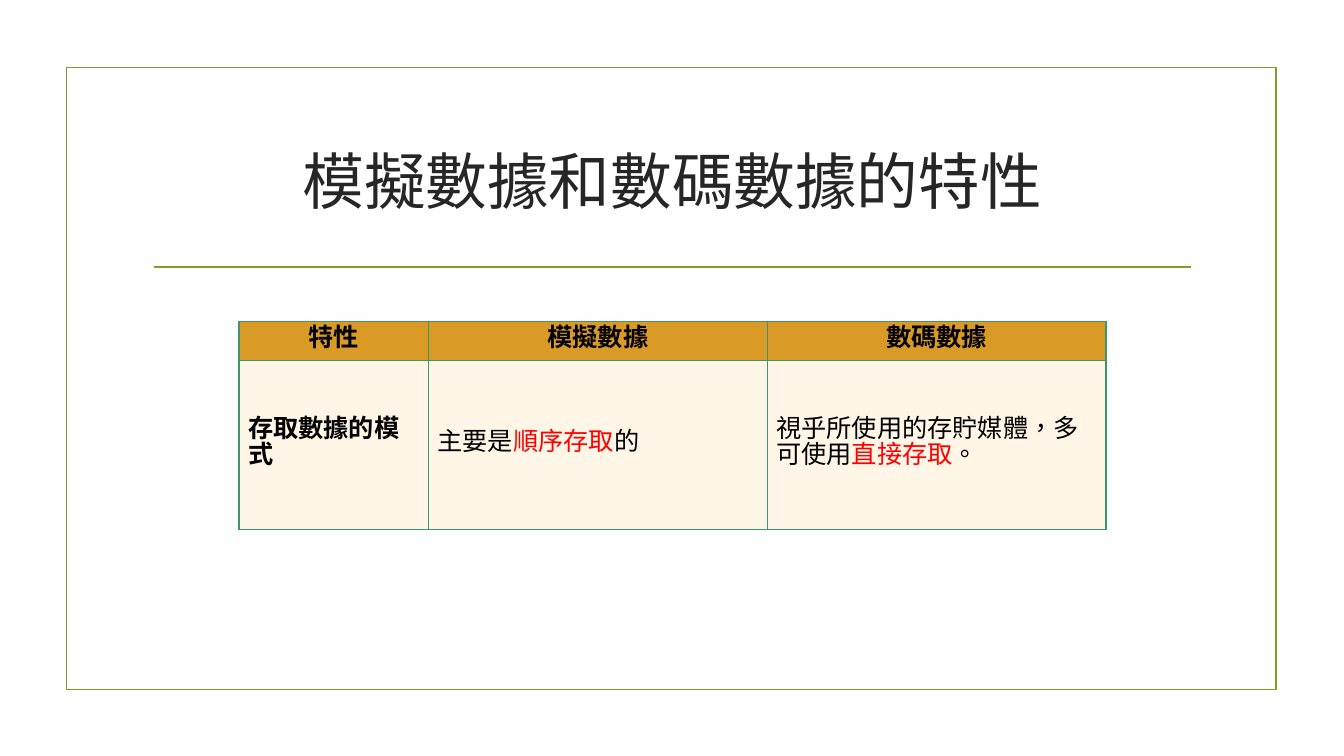
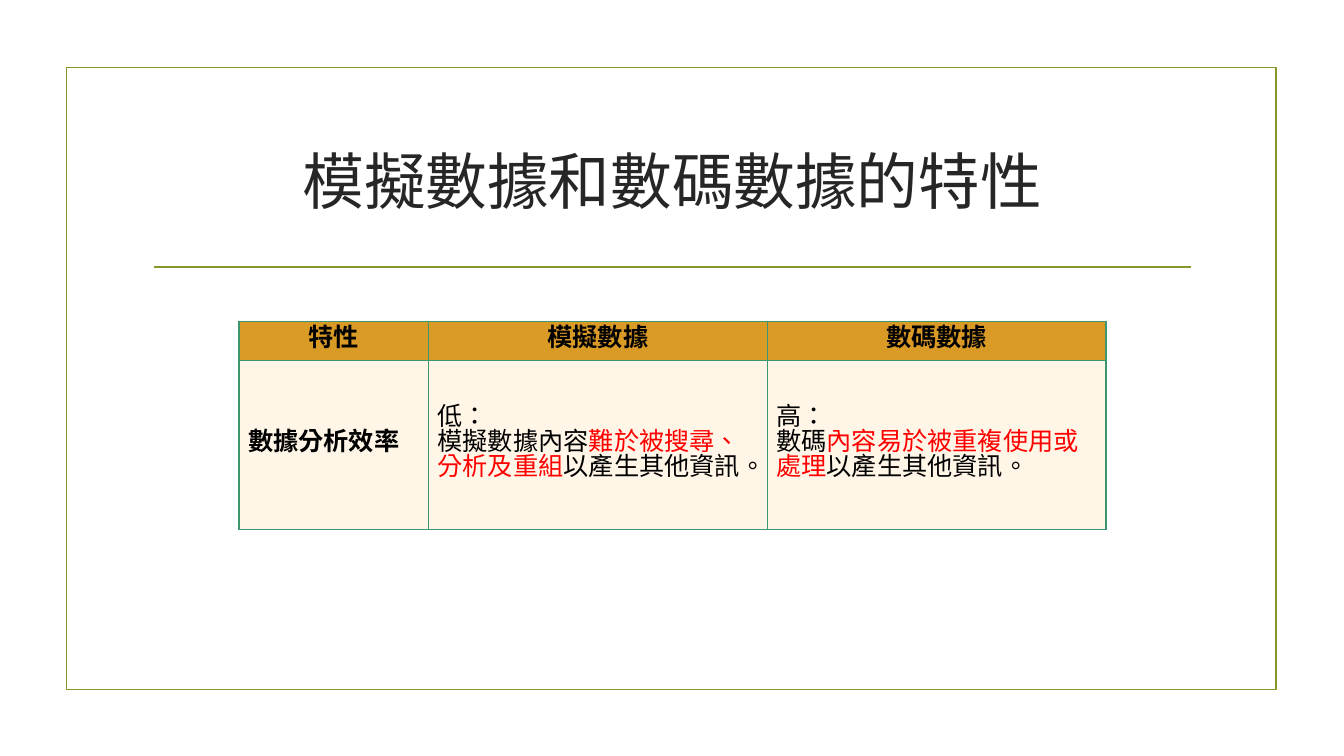
from lxml import etree
from pptx import Presentation
from pptx.dml.color import RGBColor
from pptx.enum.lang import MSO_LANGUAGE_ID
from pptx.enum.shapes import MSO_CONNECTOR, MSO_SHAPE
from pptx.enum.text import MSO_ANCHOR, PP_ALIGN
from pptx.oxml.ns import qn
from pptx.util import Inches, Pt

RECTANGLE = MSO_SHAPE.RECTANGLE
STRAIGHT = MSO_CONNECTOR.STRAIGHT
MIDDLE = MSO_ANCHOR.MIDDLE
CENTER, LEFT = PP_ALIGN.CENTER, PP_ALIGN.LEFT
CHINESE = MSO_LANGUAGE_ID.TRADITIONAL_CHINESE

COLORS = {
    "frame": "83992A", "title": "262626", "text": "000000", "key": "FF0000",
    "header": "DA9A26", "body": "FFF6E7", "border": "3C9770",
}
TITLE_FONT, TABLE_FONT = "Times New Roman", "Lato"
SLIDE_SIZE = (13.33, 7.5)

# Boxes: left, top, width, height in inches
FRAME_BOX = (0.66, 0.67, 12, 6.17)
TITLE_BOX = (1.42, 1.07, 10.5, 1.43)
RULE_BOX = (1.53, 2.65, 10.28, 0)
TABLE_BOX = (2.37, 3.19, 8.6, 2.06)
COLUMN_WIDTHS = (1.88, 3.36, 3.36)
HEADER_HEIGHT = 0.39

TITLE = "模擬數據和數碼數據的特性"
HEADERS = ("特性", "模擬數據", "數碼數據")

# Each slide: row label, then per column a list of paragraphs of (text, color) runs
ROWS = [
    ("存取數據的模式",
     [[("主要是", "text"), ("順序存取", "key"), ("的", "text")]],
     [[("視乎所使用的存貯媒體，多可使用", "text"), ("直接存取", "key"), ("。", "text")]]),
    ("數據分析效率",
     [[("低：", "text")],
      [("模擬數據內容", "text"), ("難於被搜尋、分析及重組", "key"),
       ("以產生其他資訊。", "text")]],
     [[("高：", "text")],
      [("數碼", "text"), ("內容易於被重複使用或處理", "key"),
       ("以產生其他資訊。", "text")]]),
]


def rgb(name):
    return RGBColor.from_string(COLORS[name])


def add_run(paragraph, text, font_name, size, color, bold=False):
    run = paragraph.add_run()
    run.text = text
    run.font.name = font_name
    run.font.size = Pt(size)
    run.font.bold = bold
    run.font.color.rgb = rgb(color)
    run.font.language_id = CHINESE


def set_outline(shape):
    shape.line.color.rgb = rgb("frame")
    shape.line.width = Pt(1.25)


def add_frame(slide, box):
    frame = slide.shapes.add_shape(RECTANGLE, *map(Inches, box))
    frame.shadow.inherit = False
    frame.fill.background()
    set_outline(frame)


def add_rule(slide, box):
    left, top, width, height = box
    ends = (left, top, left + width, top + height)
    rule = slide.shapes.add_connector(STRAIGHT, *map(Inches, ends))
    set_outline(rule)
    etree.SubElement(rule._element.spPr, qn("a:effectLst"))


def add_title(slide, box, text):
    text_frame = slide.shapes.add_textbox(*map(Inches, box)).text_frame
    text_frame.word_wrap = True
    text_frame.vertical_anchor = MIDDLE
    paragraph = text_frame.paragraphs[0]
    paragraph.alignment = CENTER
    add_run(paragraph, text, TITLE_FONT, 44, "title")


def set_borders(cell):
    properties = cell._tc.get_or_add_tcPr()
    for side in ("a:lnL", "a:lnR", "a:lnT", "a:lnB"):
        line = etree.SubElement(properties, qn(side), w=str(Pt(1)))
        fill = etree.SubElement(line, qn("a:solidFill"))
        etree.SubElement(fill, qn("a:srgbClr"), val=COLORS["border"])


def fill_cell(cell, paragraphs, fill, alignment=LEFT, bold=False):
    set_borders(cell)
    cell.fill.solid()
    cell.fill.fore_color.rgb = rgb(fill)
    cell.vertical_anchor = MIDDLE
    cell.margin_left = cell.margin_right = Inches(0.09)
    cell.margin_top = cell.margin_bottom = Inches(0.05)
    text_frame = cell.text_frame
    for index, runs in enumerate(paragraphs):
        paragraph = text_frame.add_paragraph() if index else text_frame.paragraphs[0]
        paragraph.alignment = alignment
        paragraph.line_spacing = Pt(18)
        for text, color in runs:
            add_run(paragraph, text, TABLE_FONT, 18, color, bold)


def add_comparison_table(slide, box, row):
    table = slide.shapes.add_table(2, len(HEADERS), *map(Inches, box)).table
    table.first_row = table.horz_banding = False
    for column, width in zip(table.columns, COLUMN_WIDTHS):
        column.width = Inches(width)
    table.rows[0].height = Inches(HEADER_HEIGHT)
    table.rows[1].height = Inches(box[3] - HEADER_HEIGHT)

    # Header row
    for index, header in enumerate(HEADERS):
        fill_cell(table.cell(0, index), [[(header, "text")]], "header", CENTER, bold=True)

    # Property row
    label, *descriptions = row
    fill_cell(table.cell(1, 0), [[(label, "text")]], "body", bold=True)
    for index, paragraphs in enumerate(descriptions, start=1):
        fill_cell(table.cell(1, index), paragraphs, "body")


def add_comparison_slide(presentation, row):
    slide = presentation.slides.add_slide(presentation.slide_layouts[6])
    add_frame(slide, FRAME_BOX)
    add_rule(slide, RULE_BOX)
    add_title(slide, TITLE_BOX, TITLE)
    add_comparison_table(slide, TABLE_BOX, row)


def main():
    presentation = Presentation()
    presentation.slide_width, presentation.slide_height = map(Inches, SLIDE_SIZE)
    for row in ROWS:
        add_comparison_slide(presentation, row)
    presentation.save("out.pptx")


if __name__ == "__main__":
    main()
